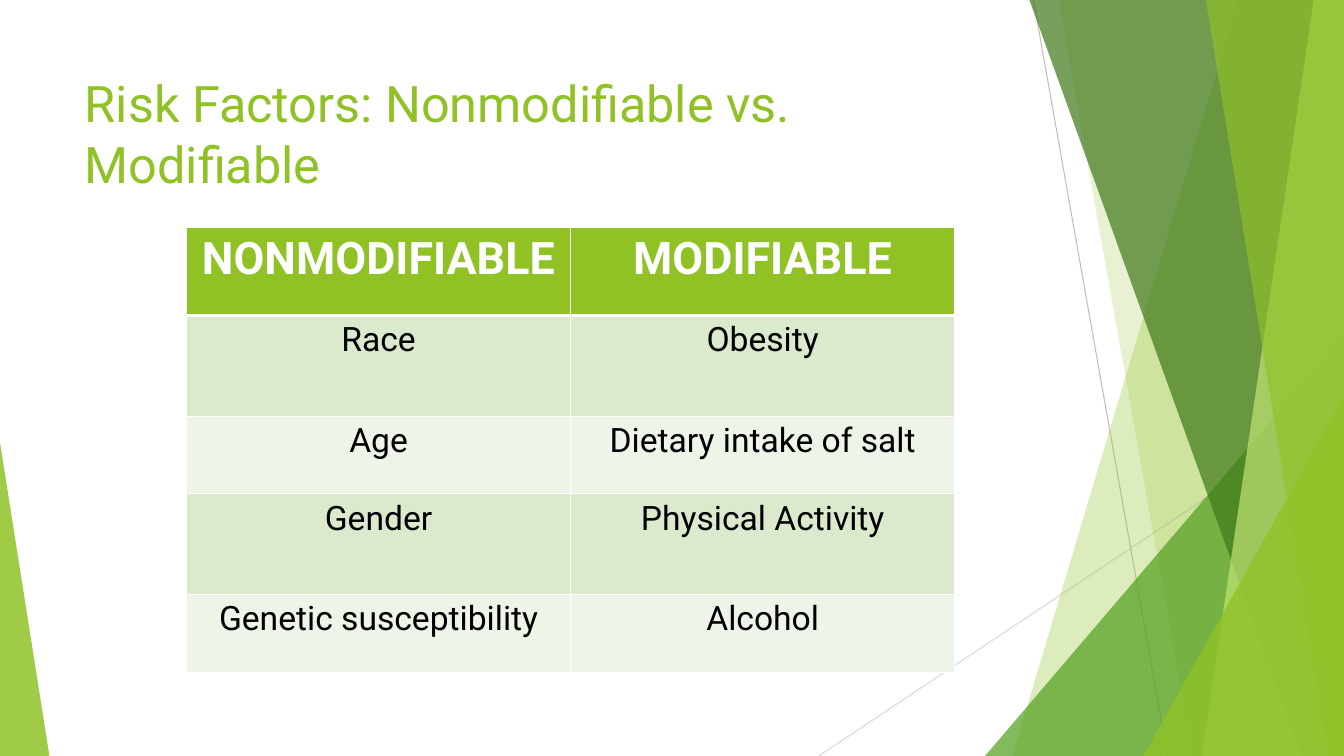
from pptx import Presentation
from pptx.dml.color import RGBColor
from pptx.enum import shapes, text
from pptx.oxml import parse_xml
from pptx.oxml.ns import nsdecls, qn
from pptx.util import Inches, Pt
from lxml import etree

GREEN = "90C226"
WIDE, HIGH = 13.33, 7.5


def paint(fill, color, alpha=100):
    fill.solid()
    fill.fore_color.rgb = RGBColor.from_string(color)
    if alpha < 100:
        tint = fill._xPr.find(qn("a:solidFill"))[0]
        etree.SubElement(tint, qn("a:alpha")).set("val", str(alpha * 1000))


def write(frame, words, size=24, color="000000", bold=False,
          align=text.PP_ALIGN.CENTER):
    para = frame.paragraphs[0]
    para.alignment = align
    run = para.add_run()
    run.text = words
    run.font.name = "Roboto"
    run.font.size = Pt(size)
    run.font.bold = bold
    run.font.color.rgb = RGBColor.from_string(color)


deck = Presentation()
deck.slide_width, deck.slide_height = Inches(WIDE), Inches(HIGH)
slide = deck.slides.add_slide(deck.slide_layouts[5])
tree = slide.shapes

lines = [(10.25, 0, 11.58, HIGH, "BFBFBF"), (WIDE, 4.03, 8.12, HIGH, "D9D9D9")]
for x1, y1, x2, y2, color in lines:
    line = tree.add_connector(shapes.MSO_CONNECTOR.STRAIGHT, Inches(x1),
                              Inches(y1), Inches(x2), Inches(y2))
    line.line.width = Pt(0.75)
    line.line.color.rgb = RGBColor.from_string(color)
    etree.SubElement(line._element.spPr, qn("a:effectLst"))

facets = [
    ("band", 12.28, 10.04, GREEN, 30),
    ("band", 10.5, 11.83, GREEN, 20),
    ("right", 9.77, 3.33, "54A021", 72),
    ("band", 10.21, 12.91, "3F7819", 70),
    ("band", 13.03, 11.92, "C0E474", 70),
    ("band", 11.96, 13.18, GREEN, 65),
    ("right", 11.34, 3.93, GREEN, 80),
    ("left", 0.49, 4.39, GREEN, 85),
]
for kind, a, b, color, alpha in facets:
    if kind == "band":
        pen = tree.build_freeform(Inches(a), Inches(0))
        pen.add_line_segments([(Inches(x), Inches(y)) for x, y in
                               [(WIDE, 0), (WIDE, HIGH), (b, HIGH)]])
        facet = pen.convert_to_shape()
    else:
        left, right = (a, WIDE) if kind == "right" else (0, a)
        facet = tree.add_shape(shapes.MSO_SHAPE.ISOSCELES_TRIANGLE,
                               Inches(left), Inches(b),
                               Inches(right - left), Inches(HIGH - b))
        facet.adjustments[0] = 1 if kind == "right" else 0
    facet.shadow.inherit = False
    facet.line.fill.background()
    paint(facet.fill, color, alpha)

title = tree.title
title.left, title.top = Inches(0.74), Inches(0.67)
title.width, title.height = Inches(9.4), Inches(1.44)
frame = title.text_frame
frame.word_wrap = True
frame.auto_size = text.MSO_AUTO_SIZE.NONE
frame.vertical_anchor = text.MSO_ANCHOR.TOP
write(frame, "Risk Factors: Nonmodifiable vs. Modifiable", size=36,
      color=GREEN, align=text.PP_ALIGN.LEFT)

rows = [
    ("NONMODIFIABLE", "MODIFIABLE"),
    ("Race", "Obesity"),
    ("Age", "Dietary intake of salt"),
    ("Gender", "Physical Activity"),
    ("Genetic susceptibility", "Alcohol"),
]
heights = [0.87, 1, 0.77, 1, 0.77]
table = tree.add_table(len(rows), 2, Inches(1.85), Inches(2.26),
                       Inches(7.62), Inches(sum(heights))).table
for col in table.columns:
    col.width = Inches(3.81)
for r, (row, high) in enumerate(zip(rows, heights)):
    table.rows[r].height = Inches(high)
    for c, words in enumerate(row):
        cell = table.cell(r, c)
        props = cell._tc.get_or_add_tcPr()
        for side in "LRTB":
            thick = 3 if (r, side) in [(0, "B"), (1, "T")] else 1
            props.append(parse_xml(
                f'<a:ln{side} {nsdecls("a")} w="{Pt(thick)}"><a:solidFill>'
                f'<a:srgbClr val="FFFFFF"/></a:solidFill></a:ln{side}>'))
        if r == 0:
            paint(cell.fill, GREEN)
            write(cell.text_frame, words, size=32, color="FFFFFF", bold=True)
        else:
            paint(cell.fill, "DBE9CD" if r % 2 else "EEF4E8")
            write(cell.text_frame, words)

deck.save("out.pptx")
